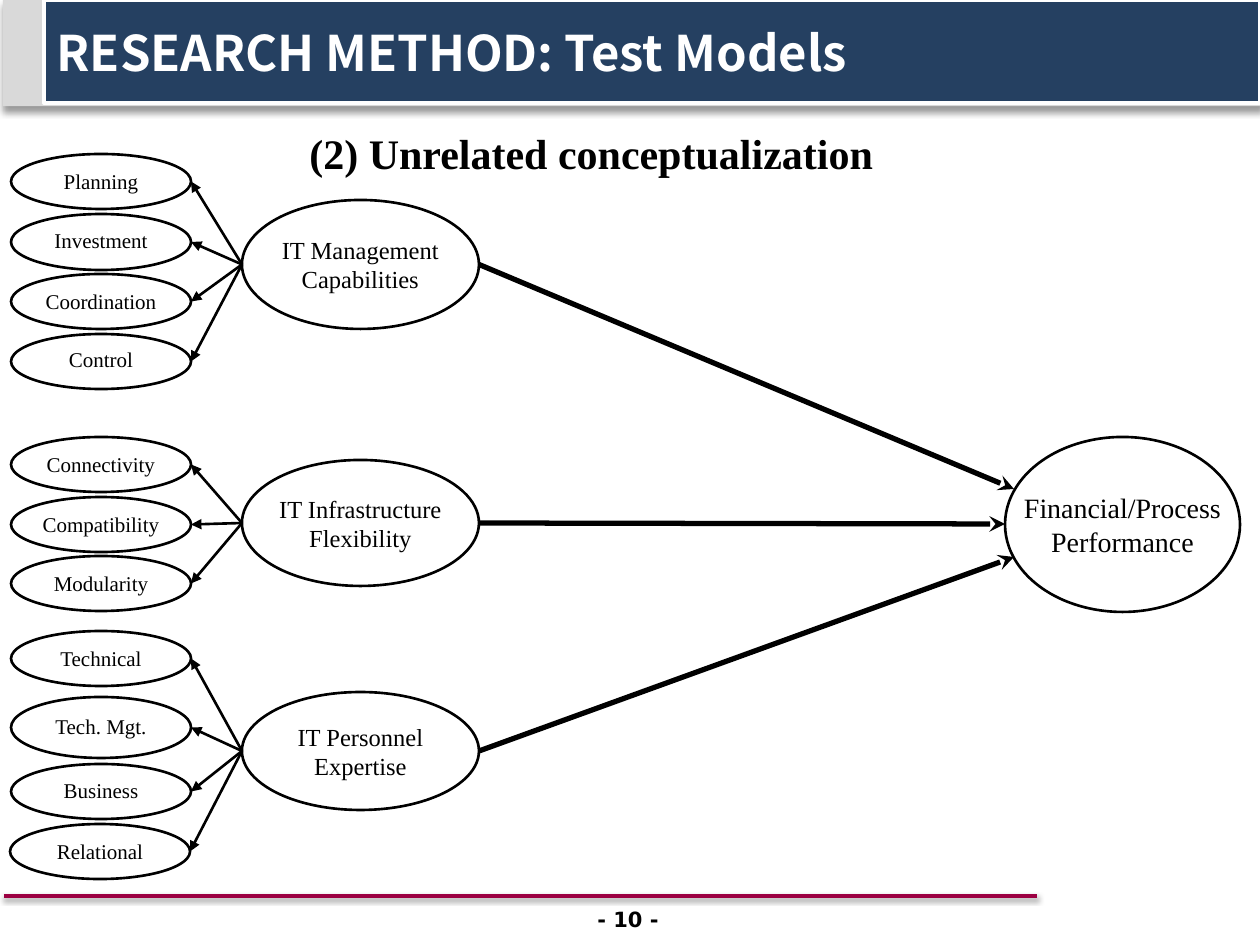
from lxml import etree
from pptx import Presentation
from pptx.dml.color import RGBColor
from pptx.enum.shapes import MSO_CONNECTOR, MSO_SHAPE
from pptx.enum.text import MSO_ANCHOR, MSO_AUTO_SIZE, PP_ALIGN
from pptx.oxml.ns import qn
from pptx.util import Emu, Pt

LEFT, CENTER = PP_ALIGN.LEFT, PP_ALIGN.CENTER
TOP, MIDDLE = MSO_ANCHOR.TOP, MSO_ANCHOR.MIDDLE
FIXED, GROW = MSO_AUTO_SIZE.NONE, MSO_AUTO_SIZE.SHAPE_TO_FIT_TEXT
ELLIPSE, ROUNDED = MSO_SHAPE.OVAL, MSO_SHAPE.ROUNDED_RECTANGLE
STRAIGHT = MSO_CONNECTOR.STRAIGHT

SCALE = 914400 / 126  # EMU per px
SERIF = "Times New Roman"
BLACK, WHITE = RGBColor(0, 0, 0), RGBColor(255, 255, 255)
THEME = {
    "band": RGBColor.from_string("D9D9D9"),
    "navy": RGBColor.from_string("254061"),
    "rule": RGBColor.from_string("9C0042"),
    "title": {"size": Pt(28), "name": "Noto Sans CJK KR", "bold": True, "color": WHITE},
    "subtitle": {"size": Pt(24), "name": SERIF, "bold": True, "color": BLACK},
    "number": {"size": Pt(12), "name": "DejaVu Sans", "bold": True, "color": BLACK},
    "outcome": {"size": Pt(16), "name": SERIF, "bold": False, "color": BLACK},
    "factor": {"size": Pt(14), "name": SERIF, "bold": False, "color": BLACK},
    "indicator": {"size": Pt(12), "name": SERIF, "bold": False, "color": BLACK},
}


def px(*lengths):
    return [Emu(round(length * SCALE)) for length in lengths]


def write(box, text, style, align=CENTER, anchor=MIDDLE, fit=FIXED, spacing=None):
    frame = box.text_frame
    frame.text = text
    layout = {"word_wrap": False, "auto_size": fit, "vertical_anchor": anchor}
    for name, value in layout.items():
        setattr(frame, name, value)
    for para in frame.paragraphs:
        para.alignment = align
        para.line_spacing = spacing
        for span in para.runs:
            for name, value in THEME[style].items():
                if name == "color":
                    span.font.color.rgb = value
                else:
                    setattr(span.font, name, value)


deck = Presentation()
deck.slide_width, deck.slide_height = px(1260, 945)
page = deck.slides.add_slide(deck.slide_layouts[5])
shapes = page.shapes

# Header band and footer rule, both with a soft shadow
band = shapes.add_shape(ROUNDED, *px(3, -1, 1260, 107))
band.adjustments[0] = 0
band.fill.solid()
band.fill.fore_color.rgb = THEME["band"]
band.line.fill.background()
rule = shapes.add_connector(STRAIGHT, *px(4, 896, 1037, 896))
rule.line.color.rgb = THEME["rule"]
rule.line.width = Pt(2)
for part, blur, distance, alpha in ((band, 4, 3, 40), (rule, 3.1, 1.6, 38)):
    effects = etree.SubElement(part.element.spPr, qn("a:effectLst"))
    shadow = etree.SubElement(effects, qn("a:outerShdw"), blurRad=str(Pt(blur)),
                              dist=str(Pt(distance)), dir="5400000", rotWithShape="0")
    shade = etree.SubElement(shadow, qn("a:srgbClr"), val="000000")
    etree.SubElement(shade, qn("a:alpha"), val=str(alpha * 1000))

# Title in front of the band
title = shapes.title
rule.element.addnext(title.element)
title.left, title.top, title.width, title.height = px(44, 0, 1216, 103)
title.fill.solid()
title.fill.fore_color.rgb = THEME["navy"]
title.line.color.rgb = WHITE
title.line.width = Pt(2.25)
write(title, "RESEARCH METHOD: Test Models", "title", align=LEFT)

# Subtitle and page number
subtitle = shapes.add_textbox(*px(297, 121, 605, 63))
write(subtitle, "(2) Unrelated conceptualization", "subtitle", align=LEFT, anchor=TOP, fit=GROW)
number = shapes.add_textbox(*px(481, 900, 294, 35))
write(number, "- 10 -", "number", anchor=TOP)

# Model: factor text, top, height, arrow tip at the outcome, and its
# indicators as name, left, top, height, line spacing
MODEL = [
    ("IT Management\nCapabilities", 200, 129, (1014, 489), [
        ("Planning", 11, 154, 55, None),
        ("Investment", 11, 214, 56, 0.8),
        ("Coordination", 11, 274, 55, None),
        ("Control", 11, 334, 55, 0.8),
    ]),
    ("IT Infrastructure\nFlexibility", 460, 126, (1005, 524), [
        ("Connectivity", 11, 437, 55, None),
        ("Compatibility", 11, 497, 55, None),
        ("Modularity", 11, 556, 55, None),
    ]),
    ("IT Personnel\nExpertise", 692, 118, (1014, 557), [
        ("Technical", 11, 631, 55, None),
        ("Tech. Mgt.", 11, 697, 61, 0.9),
        ("Business", 11, 764, 55, 0.9),
        ("Relational", 10, 824, 55, None),
    ]),
]
FACTOR_LEFT, FACTOR_WIDTH, INDICATOR_WIDTH = 242, 237, 180

ovals = [("Financial/Process\nPerformance", "outcome", (1005, 437, 235, 175), None)]
arrows = []
for factor, top, height, tip, indicators in MODEL:
    middle = top + height / 2
    ovals.append((factor, "factor", (FACTOR_LEFT, top, FACTOR_WIDTH, height), None))
    arrows.append(((FACTOR_LEFT + FACTOR_WIDTH, middle), tip, 3, "stealth"))
    for name, left, y, tall, spacing in indicators:
        ovals.append((name, "indicator", (left, y, INDICATOR_WIDTH, tall), spacing))
        end = (left + INDICATOR_WIDTH, y + tall / 2)
        arrows.append(((FACTOR_LEFT, middle), end, 1.5, "triangle"))

# Ellipses
for text, style, place, spacing in ovals:
    oval = shapes.add_shape(ELLIPSE, *px(*place))
    oval.shadow.inherit = False
    oval.fill.background()
    oval.line.color.rgb = BLACK
    oval.line.width = Pt(1.5)
    write(oval, text, style, spacing=spacing)

# Arrows
for start, end, width, head in arrows:
    arrow = shapes.add_connector(STRAIGHT, *px(*start, *end))
    arrow.line.color.rgb = BLACK
    arrow.line.width = Pt(width)
    etree.SubElement(arrow.line._get_or_add_ln(), qn("a:tailEnd"), type=head)
    etree.SubElement(arrow.element.spPr, qn("a:effectLst"))

deck.save("out.pptx")
